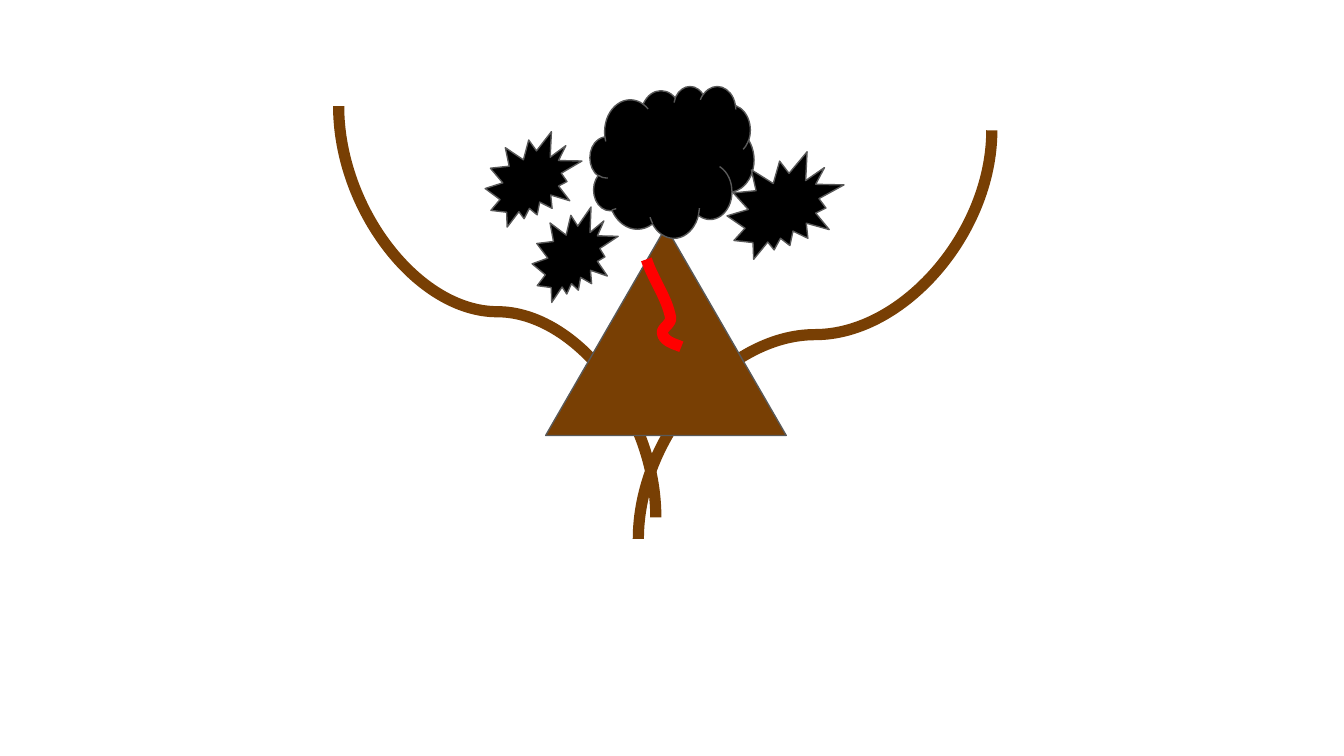
from dataclasses import dataclass

from lxml.etree import SubElement
from pptx import Presentation
from pptx.dml.color import RGBColor
from pptx.enum.shapes import MSO_CONNECTOR, MSO_SHAPE
from pptx.oxml.ns import qn
from pptx.util import Emu, Pt

EMU_PER_PX = 9144  # 100 px to the inch
SLIDE_WIDTH = 1000
BROWN = RGBColor(0x78, 0x3F, 0x04)
BLACK = RGBColor(0x00, 0x00, 0x00)
GREY = RGBColor(0x59, 0x59, 0x59)
RED = RGBColor(0xFF, 0x00, 0x00)
CURVE_STEPS = 16

Point = tuple[float, float]


@dataclass
class Arm:
    start: Point
    end: Point


@dataclass
class Figure:
    kind: MSO_SHAPE
    left: int
    top: int
    width: int
    height: int
    fill: RGBColor


ARMS = [Arm((252, 79), (488, 385)), Arm((475, 401), (738, 97))]

FIGURES = [
    Figure(MSO_SHAPE.ISOSCELES_TRIANGLE, 406, 169, 179, 155, BROWN),
    Figure(MSO_SHAPE.CLOUD, 439, 64, 122, 113, BLACK),
    Figure(MSO_SHAPE.EXPLOSION2, 541, 113, 87, 80, BLACK),
    Figure(MSO_SHAPE.EXPLOSION2, 396, 154, 64, 71, BLACK),
    Figure(MSO_SHAPE.EXPLOSION2, 361, 98, 72, 71, BLACK),
]

LAVA_START = (481, 193)
LAVA_CURVES = [
    ((486, 208), (496, 221), (499, 236)),
    ((500, 241), (492, 244), (493, 248)),
    ((494, 254), (502, 256), (507, 258)),
]


def px(length: float) -> Emu:
    return Emu(round(length * EMU_PER_PX))


def set_line(shape, color: RGBColor, width: float) -> None:
    shape.line.color.rgb = color
    shape.line.width = Pt(width)


def draw_arm(slide, arm: Arm) -> None:
    """Draw an S-curve that leaves its ends vertically, by a 270 degree turn."""
    (x1, y1), (x2, y2) = arm.start, arm.end
    center_x, center_y = (x1 + x2) / 2, (y1 + y2) / 2
    # Ends before the turn
    offset_x, offset_y = center_y - y1, x1 - center_x
    connector = slide.shapes.add_connector(
        MSO_CONNECTOR.CURVE,
        px(center_x + offset_x), px(center_y + offset_y),
        px(center_x - offset_x), px(center_y - offset_y),
    )
    set_line(connector, BROWN, 6)
    properties = connector.element.spPr
    properties.find(qn("a:xfrm")).set("rot", str(270 * 60000))
    SubElement(properties, qn("a:effectLst"))


def draw_figure(slide, figure: Figure) -> None:
    shape = slide.shapes.add_shape(
        figure.kind, px(figure.left), px(figure.top), px(figure.width), px(figure.height)
    )
    shape.shadow.inherit = False
    shape.fill.solid()
    shape.fill.fore_color.rgb = figure.fill
    set_line(shape, GREY, 0.75)


def bezier_point(points: list[Point], t: float) -> Point:
    weights = ((1 - t) ** 3, 3 * t * (1 - t) ** 2, 3 * t**2 * (1 - t), t**3)
    return (
        px(sum(weight * x for weight, (x, _) in zip(weights, points))),
        px(sum(weight * y for weight, (_, y) in zip(weights, points))),
    )


def draw_lava(slide) -> None:
    start = LAVA_START
    builder = slide.shapes.build_freeform(px(start[0]), px(start[1]), scale=1.0)
    for curve in LAVA_CURVES:
        points = [start, *curve]
        steps = range(1, CURVE_STEPS + 1)
        builder.add_line_segments(
            [bezier_point(points, step / CURVE_STEPS) for step in steps], close=False
        )
        start = curve[-1]
    lava = builder.convert_to_shape()
    lava.shadow.inherit = False
    lava.fill.background()
    set_line(lava, RED, 6)


def main() -> None:
    presentation = Presentation()
    presentation.slide_width = px(SLIDE_WIDTH)
    presentation.slide_height = px(SLIDE_WIDTH * 9 / 16)
    slide = presentation.slides.add_slide(presentation.slide_layouts[6])

    # Curved arms behind the volcano
    for arm in ARMS:
        draw_arm(slide, arm)

    # Volcano, smoke cloud and bursts
    for figure in FIGURES:
        draw_figure(slide, figure)

    # Lava stream
    draw_lava(slide)

    presentation.save("out.pptx")


if __name__ == "__main__":
    main()
